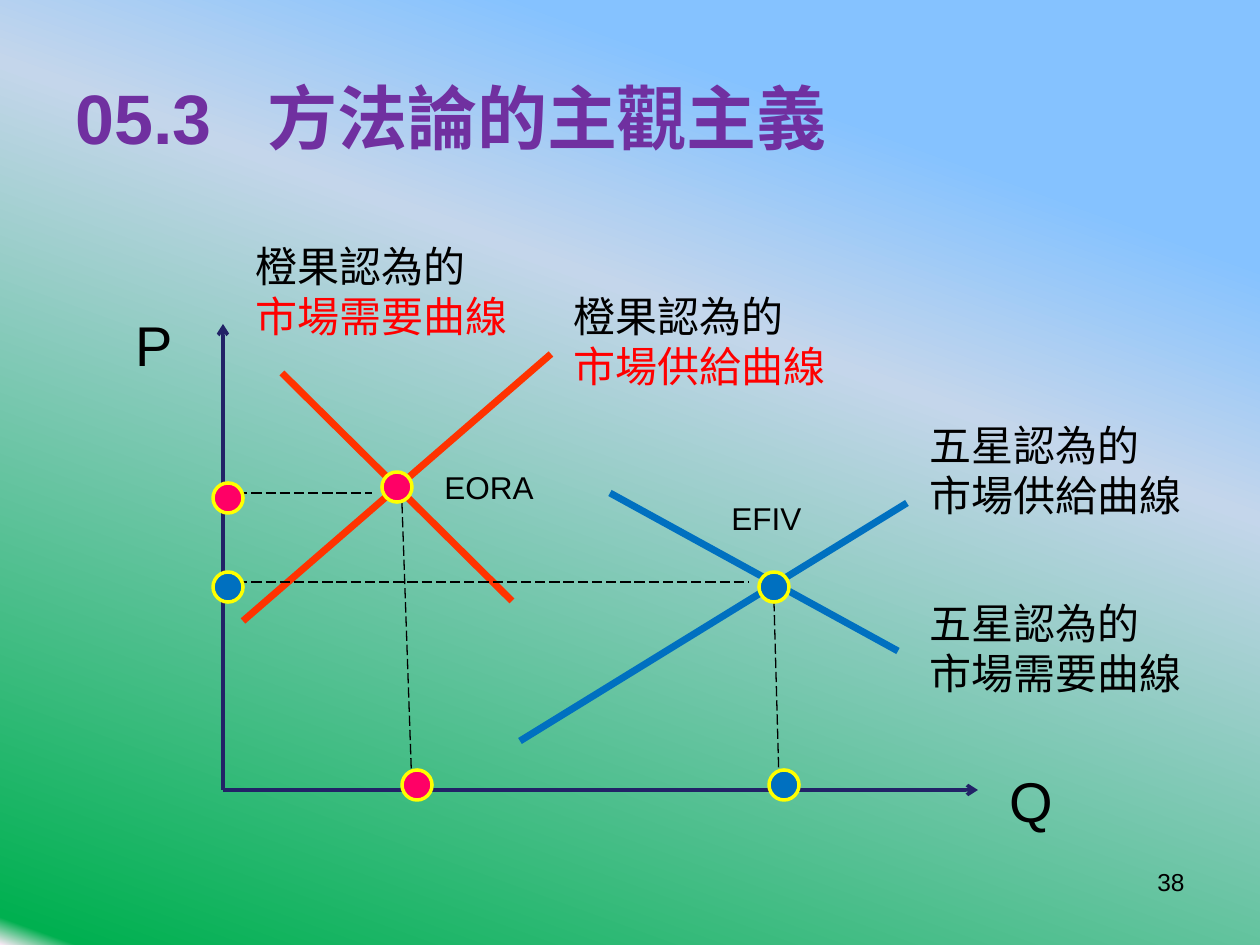
from lxml.etree import SubElement
from pptx import Presentation
from pptx.dml.color import RGBColor
from pptx.enum.dml import MSO_LINE_DASH_STYLE as Dash
from pptx.enum.shapes import MSO_CONNECTOR as Connector, MSO_SHAPE as Shape
from pptx.enum.text import MSO_ANCHOR as Anchor, PP_ALIGN as Align
from pptx.oxml.ns import qn
from pptx.util import Emu, Pt

PX = 914400 // 126
FONT = "Arial"
BLACK = RGBColor(0, 0, 0)
PURPLE = RGBColor(0x70, 0x30, 0xA0)
NAVY = RGBColor(0x22, 0x22, 0x67)
ORANGE = RGBColor(0xFF, 0x33, 0x00)
RED = RGBColor(0xFF, 0x00, 0x00)
PINK = RGBColor(0xFF, 0x00, 0x66)
BLUE = RGBColor(0x00, 0x70, 0xC0)
YELLOW = RGBColor(0xFF, 0xFF, 0x00)

BACKGROUND_STOPS = [
    (19, RGBColor(0x85, 0xC2, 0xFF)),
    (37, RGBColor(0xC4, 0xD6, 0xEB)),
    (98, RGBColor(0x00, 0xB0, 0x50)),
    (100, RGBColor(0xFF, 0xEB, 0xFA)),
]
BACKGROUND_ANGLE = 250  # counter-clockwise

TITLE = "05.3\t方法論的主觀主義"
TITLE_BOX = (63, 38, 1134, 157)
TITLE_TAB = 192
PAGE_NUMBER = "38"
PAGE_NUMBER_BOX = (903, 861, 294, 65)

ORIGIN = (223, 790)
AXIS_ENDS = [(978, 790), (223, 324)]
CURVES = [
    ((282, 373), (512, 601), ORANGE),
    ((551, 354), (243, 621), ORANGE),
    ((907, 503), (520, 741), BLUE),
    ((610, 493), (898, 651), BLUE),
]
GUIDES = [
    ((774, 601), (779, 780)),
    ((402, 503), (412, 790)),
    ((223, 493), (372, 493)),
    ((223, 582), (748, 582)),
]
DOT_SIZE = 30
DOT_CENTRES = {
    PINK: [(397, 487), (228, 498), (417, 785)],
    BLUE: [(774, 587), (228, 587), (784, 785)],
}

CURVE_LABEL_SIZE = (280, 115)
CURVE_LABELS = [  # position, believer, curve, curve colour
    ((917, 413), "五星認為的", "市場供給曲線", BLACK),
    ((917, 591), "五星認為的", "市場需要曲線", BLACK),
    ((243, 234), "橙果認為的", "市場需要曲線", RED),
    ((561, 284), "橙果認為的", "市場供給曲線", RED),
]
POINT_LABELS = [  # text, box, font size
    ("P", (123, 304, 63, 81), 32),
    ("Q", (997, 760, 69, 81), 32),
    ("EORA", (432, 462, 125, 50), 18),
    ("EFIV", (719, 493, 113, 50), 18),
]


def px(*lengths):
    return [Emu(length * PX) for length in lengths]


def paint_background(slide):
    fill = slide.background.fill
    fill.gradient()
    fill.gradient_angle = BACKGROUND_ANGLE
    stops = slide.element.find(".//" + qn("a:gsLst"))
    for stop in list(stops):
        stops.remove(stop)
    for position, color in BACKGROUND_STOPS:
        stop = SubElement(stops, qn("a:gs"), pos=str(position * 1000))
        SubElement(stop, qn("a:srgbClr"), val=str(color))


def add_text(slide, box, lines, size, wrap=False, bold=False, align=Align.LEFT):
    """Add a text box with one paragraph for each (text, colour) line."""
    frame = slide.shapes.add_textbox(*px(*box)).text_frame
    frame.word_wrap = wrap
    for index, (text, color) in enumerate(lines):
        paragraph = frame.add_paragraph() if index else frame.paragraphs[0]
        paragraph.alignment = align
        run = paragraph.add_run()
        run.text = text
        run.font.name = FONT
        run.font.size = Pt(size)
        run.font.bold = bold
        run.font.color.rgb = color
    return frame


def add_title(slide):
    frame = add_text(slide, TITLE_BOX, [(TITLE, PURPLE)], 40, wrap=True, bold=True)
    frame.vertical_anchor = Anchor.MIDDLE
    properties = frame.paragraphs[0]._p.get_or_add_pPr()
    tabs = SubElement(properties, qn("a:tabLst"))
    SubElement(tabs, qn("a:tab"), pos=str(TITLE_TAB * PX), algn="l")


def add_line(slide, start, end, color, width, dash=None, arrow=False):
    connector = slide.shapes.add_connector(Connector.STRAIGHT, *px(*start, *end))
    line = connector.line
    line.color.rgb = color
    line.width = Pt(width)
    if dash:
        line.dash_style = dash
    if arrow:
        SubElement(line._get_or_add_ln(), qn("a:tailEnd"), type="arrow")
    SubElement(connector._element.spPr, qn("a:effectLst"))


def add_dot(slide, centre, color):
    left, top = (middle - DOT_SIZE // 2 for middle in centre)
    dot = slide.shapes.add_shape(Shape.OVAL, *px(left, top, DOT_SIZE, DOT_SIZE))
    dot.shadow.inherit = False
    dot.fill.solid()
    dot.fill.fore_color.rgb = color
    dot.line.color.rgb = YELLOW
    dot.line.width = Pt(2)


def main():
    presentation = Presentation()
    presentation.slide_width, presentation.slide_height = px(1260, 945)
    slide = presentation.slides.add_slide(presentation.slide_layouts[6])
    paint_background(slide)
    add_title(slide)

    for end in AXIS_ENDS:
        add_line(slide, ORIGIN, end, NAVY, 2, arrow=True)
    for start, end, color in CURVES:
        add_line(slide, start, end, color, 4)
    for start, end in GUIDES:
        add_line(slide, start, end, BLACK, 0.75, dash=Dash.LONG_DASH)

    add_text(slide, PAGE_NUMBER_BOX, [(PAGE_NUMBER, BLACK)], 14,
             wrap=True, align=Align.RIGHT)
    for position, believer, curve, color in CURVE_LABELS:
        add_text(slide, position + CURVE_LABEL_SIZE,
                 [(believer, BLACK), (curve, color)], 24)
    for text, box, size in POINT_LABELS:
        add_text(slide, box, [(text, BLACK)], size)

    for color, centres in DOT_CENTRES.items():
        for centre in centres:
            add_dot(slide, centre, color)
    presentation.save("out.pptx")


if __name__ == "__main__":
    main()
